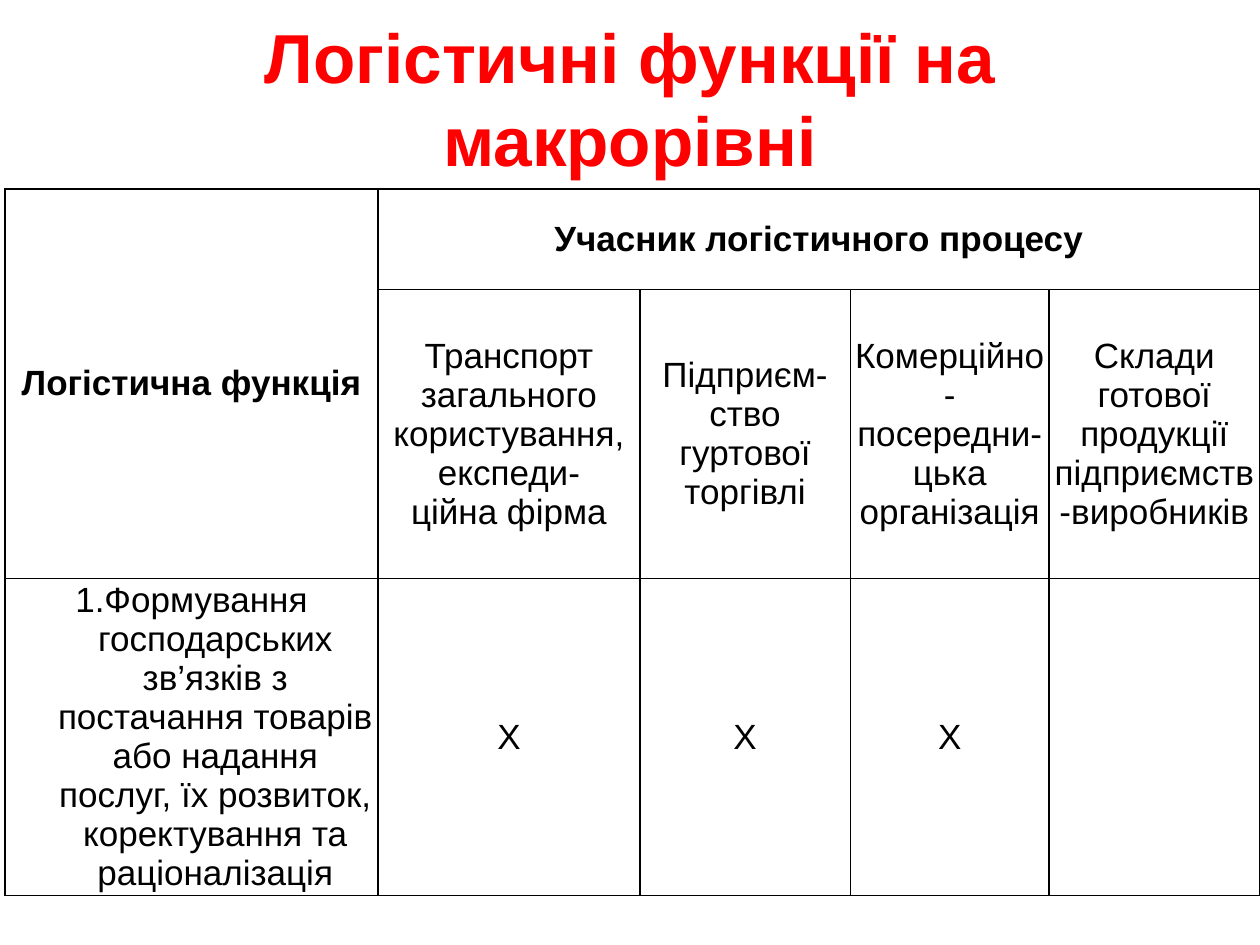
from dataclasses import dataclass

from lxml.etree import SubElement
from pptx import Presentation
from pptx.dml.color import RGBColor
from pptx.enum.text import MSO_ANCHOR, MSO_AUTO_SIZE, PP_ALIGN
from pptx.oxml.ns import qn
from pptx.table import Table, _Cell
from pptx.text.text import TextFrame
from pptx.util import Cm, Pt


@dataclass(frozen=True)
class Theme:
    font: str = "Arial"
    title_color: str = "FF0000"
    ink: str = "000000"
    title_size: float = 39.6
    body_size: float = 20
    border: float = 1
    inset: float = 0.05
    hanging: float = 0.96


@dataclass(frozen=True)
class CellText:
    row: int
    col: int
    text: str
    bold: bool = False
    hanging: bool = False


THEME = Theme()
COL_WIDTHS = (7.52, 5.28, 4.24, 4.01, 4.24)
ROW_HEIGHTS = (2.03, 5.82, 5.54)
CELLS = [
    CellText(0, 0, "Логістична функція", bold=True, hanging=True),
    CellText(0, 1, "Учасник логістичного процесу", bold=True),
    CellText(1, 1, "Транспорт загального\nкористування, експеди-\nційна фірма"),
    CellText(1, 2, "Підприєм-\nство гуртової торгівлі"),
    CellText(1, 3, "Комерційно-посередни-\nцька організація"),
    CellText(1, 4, "Склади готової продукції підприємств-виробників"),
    CellText(2, 0, "1.Формування господарських зв’язків з постачання товарів "
                   "або надання послуг, їх розвиток, коректування та "
                   "раціоналізація", hanging=True),
    *(CellText(2, col, "Х", hanging=True) for col in (1, 2, 3)),
]


def write_text(tf: TextFrame, text: str, *, size: float = THEME.body_size,
               color: str = THEME.ink, bold: bool = False,
               hanging: bool = False) -> None:
    """Fill a text frame with centred paragraphs, one per line of text."""
    for i, line in enumerate(text.split("\n")):
        p = tf.paragraphs[0] if i == 0 else tf.add_paragraph()
        p.alignment = PP_ALIGN.CENTER
        if hanging:
            pPr = p._p.get_or_add_pPr()
            pPr.set("marL", str(Cm(THEME.hanging)))
            pPr.set("indent", str(-Cm(THEME.hanging)))
        r = p.add_run()
        r.text = line
        r.font.name = THEME.font
        r.font.size = Pt(size)
        r.font.bold = bold
        r.font.color.rgb = RGBColor.from_string(color)


def format_cell(cell: _Cell) -> None:
    """Give a cell solid borders, no fill, narrow margins and middle anchor."""
    tcPr = cell._tc.get_or_add_tcPr()
    for side in ("a:lnL", "a:lnR", "a:lnT", "a:lnB"):
        ln = SubElement(tcPr, qn(side), w=str(Pt(THEME.border)))
        fill = SubElement(ln, qn("a:solidFill"))
        SubElement(fill, qn("a:srgbClr"), val=THEME.ink)
    cell.fill.background()
    cell.vertical_anchor = MSO_ANCHOR.MIDDLE
    cell.margin_left = cell.margin_right = Cm(THEME.inset)
    cell.margin_top = cell.margin_bottom = Cm(THEME.inset)


def fill_table(table: Table) -> None:
    table.first_row = table.horz_banding = False
    for col, width in zip(table.columns, COL_WIDTHS):
        col.width = Cm(width)
    for row, height in zip(table.rows, ROW_HEIGHTS):
        row.height = Cm(height)
    for cell in table.iter_cells():
        format_cell(cell)

    # Merged headings
    table.cell(0, 0).merge(table.cell(1, 0))
    table.cell(0, 1).merge(table.cell(0, 4))

    for c in CELLS:
        write_text(table.cell(c.row, c.col).text_frame, c.text,
                   bold=c.bold, hanging=c.hanging)


def main() -> None:
    prs = Presentation()
    prs.slide_width, prs.slide_height = Cm(25.4), Cm(19.05)
    s = prs.slides.add_slide(prs.slide_layouts[5])

    # Title
    title = s.shapes.title
    title.left, title.top = Cm(1.27), Cm(0.76)
    title.width, title.height = Cm(22.86), Cm(2.41)
    tf = title.text_frame
    tf.word_wrap = True
    tf.auto_size = MSO_AUTO_SIZE.NONE
    tf.vertical_anchor = MSO_ANCHOR.MIDDLE
    write_text(tf, "Логістичні функції на макрорівні", bold=True,
               size=THEME.title_size, color=THEME.title_color)

    # Table of functions and participants
    frame = s.shapes.add_table(len(ROW_HEIGHTS), len(COL_WIDTHS), Cm(0.1),
                               Cm(3.81), Cm(sum(COL_WIDTHS)),
                               Cm(sum(ROW_HEIGHTS)))
    fill_table(frame.table)

    prs.save("out.pptx")


if __name__ == "__main__":
    main()
